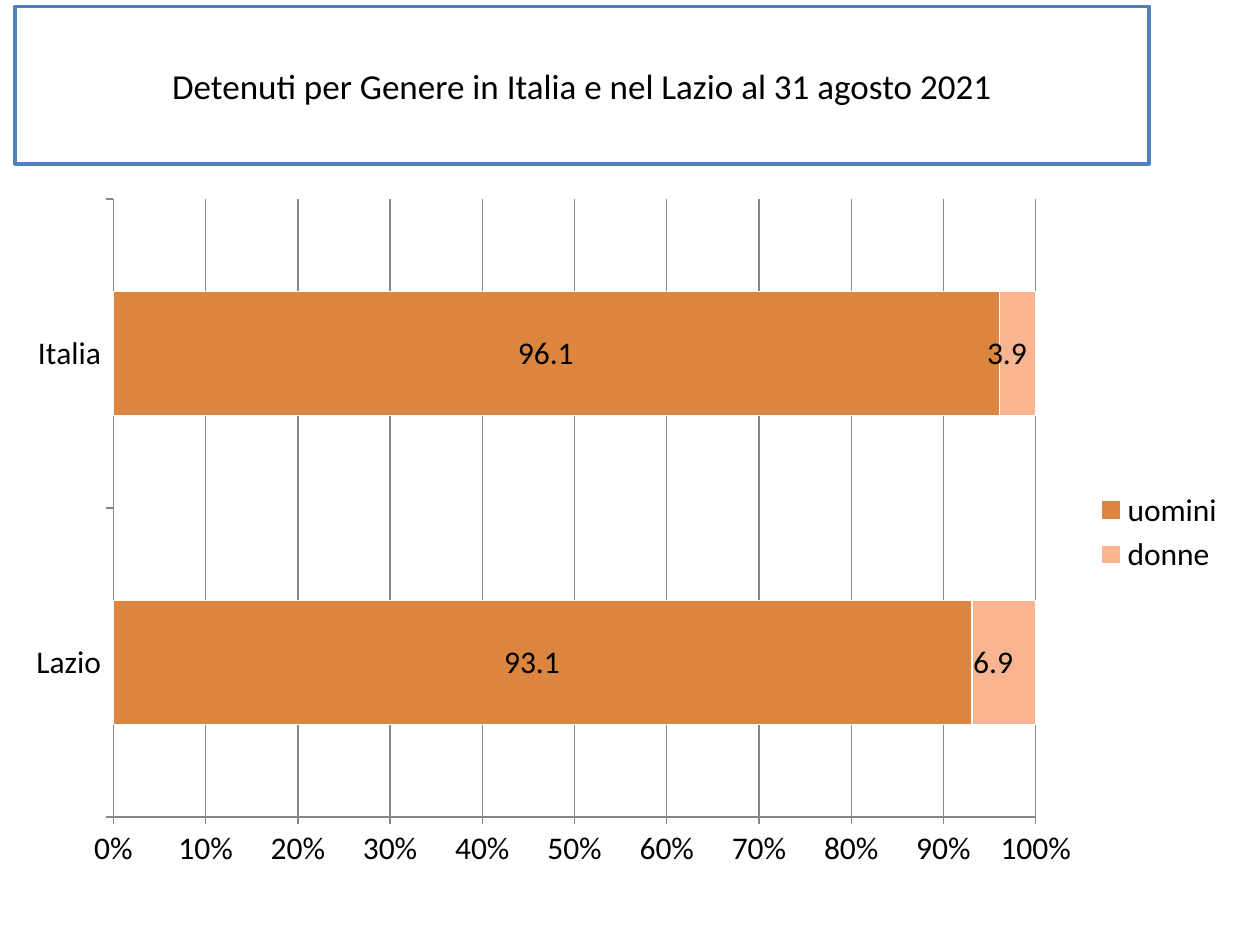
from dataclasses import dataclass

from lxml import etree
from pptx import Presentation
from pptx import util as u
from pptx.chart.data import CategoryChartData
from pptx.dml.color import RGBColor
from pptx.enum import chart as c, text
from pptx.oxml.ns import qn

TITLE = "Detenuti per Genere in Italia e nel Lazio al 31 agosto 2021"
CATEGORIES = ["Lazio", "Italia"]
SERIES = [("uomini ", (93.1, 96.1)), ("donne", (6.9, 3.9))]
LABEL_FORMAT = r"_-* #,##0.0\ _€_-"

SLIDE_WIDTH, SLIDE_HEIGHT = 10, 7.5
MARGIN = 0.12
TITLE_BOX = (MARGIN, 0.05, 9, 1.25)
CHART_BOX = (MARGIN, 1.47, SLIDE_WIDTH - 2 * MARGIN, 5.51)
PLOT_SHARES = {"x": 0.08, "y": 0.02, "w": 0.75, "h": 0.89}


@dataclass(frozen=True)
class Theme:
    font: str = "Calibri"
    title_size: int = 20
    chart_size: int = 18
    ink: str = "000000"
    paper: str = "FFFFFF"
    border: str = "4F81BD"
    grid: str = "868686"
    bars: tuple = ("DC853E", "F9B590")


THEME = Theme()


def color(value):
    return RGBColor.from_string(value)


def style_font(font, size):
    font.name = THEME.font
    font.size = u.Pt(size)
    font.color.rgb = color(THEME.ink)


def style_line(line, value, width):
    line.color.rgb = color(value)
    line.width = u.Pt(width)


def add_title(slide):
    shape = slide.shapes.title
    shape.left, shape.top, shape.width, shape.height = map(u.Inches, TITLE_BOX)
    shape.fill.solid()
    shape.fill.fore_color.rgb = color(THEME.paper)
    style_line(shape.line, THEME.border, 2)
    frame = shape.text_frame
    frame.word_wrap = True
    frame.vertical_anchor = text.MSO_ANCHOR.MIDDLE
    paragraph = frame.paragraphs[0]
    paragraph.alignment = text.PP_ALIGN.CENTER
    run = paragraph.add_run()
    run.text = TITLE
    style_font(run.font, THEME.title_size)


def place_plot(chart):
    plot_area = chart.plots[0]._element.getparent()
    for old in plot_area.findall(qn("c:layout")):
        plot_area.remove(old)
    layout = etree.Element(qn("c:layout"))
    manual = etree.SubElement(layout, qn("c:manualLayout"))
    settings = {"layoutTarget": "inner", "xMode": "edge", "yMode": "edge", **PLOT_SHARES}
    for name, value in settings.items():
        etree.SubElement(manual, qn(f"c:{name}")).set("val", str(value))
    plot_area.insert(0, layout)


def add_gender_chart(slide):
    data = CategoryChartData(number_format=LABEL_FORMAT)
    data.categories = CATEGORIES
    for name, values in SERIES:
        data.add_series(name, values)
    chart = slide.shapes.add_chart(
        c.XL_CHART_TYPE.BAR_STACKED_100, *map(u.Inches, CHART_BOX), data
    ).chart
    chart.has_title = False
    style_font(chart.font, THEME.chart_size)
    chart.has_legend = True
    chart.legend.position = c.XL_LEGEND_POSITION.RIGHT
    chart.legend.include_in_layout = False

    plot = chart.plots[0]
    plot.gap_width, plot.overlap = 150, 100
    plot.vary_by_categories = False
    for series, fill in zip(plot.series, THEME.bars):
        series.format.fill.solid()
        series.format.fill.fore_color.rgb = color(fill)
        style_line(series.format.line, THEME.paper, 0.75)
        labels = series.data_labels
        labels.show_value = True
        labels.position = c.XL_LABEL_POSITION.CENTER
        labels.number_format = LABEL_FORMAT
        labels.number_format_is_linked = False
        style_font(labels.font, THEME.chart_size)

    for axis in (chart.category_axis, chart.value_axis):
        axis.major_tick_mark = c.XL_TICK_MARK.OUTSIDE
        axis.minor_tick_mark = c.XL_TICK_MARK.NONE
        style_line(axis.format.line, THEME.grid, 0.75)
        style_font(axis.tick_labels.font, THEME.chart_size)
    axis = chart.value_axis
    axis.minimum_scale, axis.maximum_scale, axis.major_unit = 0, 1, 0.1
    axis.has_major_gridlines = True
    style_line(axis.major_gridlines.format.line, THEME.grid, 0.75)
    axis.tick_labels.number_format = "0%"
    axis.tick_labels.number_format_is_linked = False
    place_plot(chart)


def main():
    presentation = Presentation()
    presentation.slide_width = u.Inches(SLIDE_WIDTH)
    presentation.slide_height = u.Inches(SLIDE_HEIGHT)
    slide = presentation.slides.add_slide(presentation.slide_layouts.get_by_name("Title Only"))
    add_title(slide)
    add_gender_chart(slide)
    presentation.save("out.pptx")


if __name__ == "__main__":
    main()
